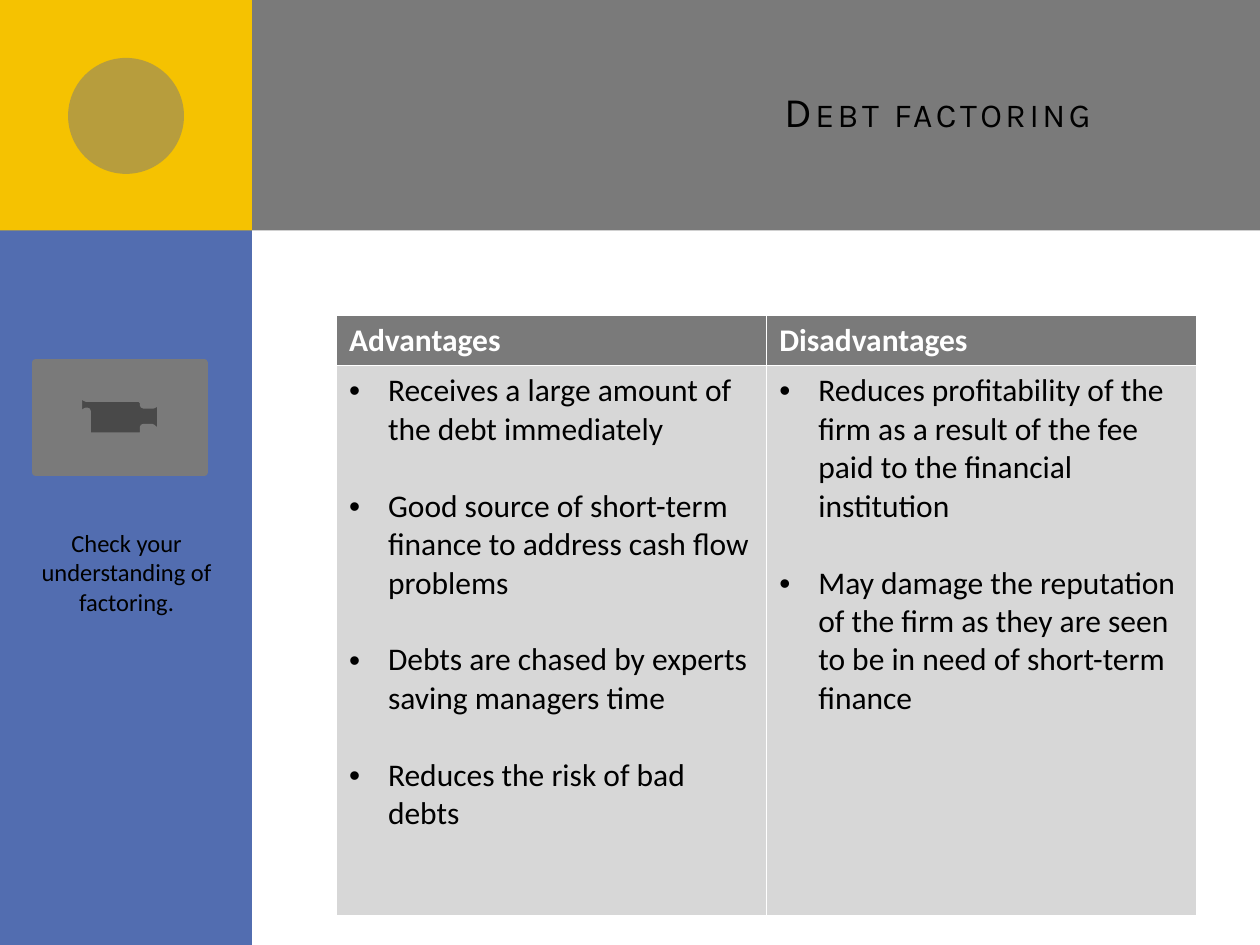
"""Build the debt factoring slide with its advantages and disadvantages table."""
from lxml import etree
from pptx import Presentation
from pptx.dml.color import RGBColor
from pptx.enum.shapes import MSO_SHAPE
from pptx.enum.text import MSO_ANCHOR, PP_ALIGN
from pptx.oxml.ns import qn
from pptx.util import Inches, Pt

RECTANGLE = MSO_SHAPE.RECTANGLE
OVAL = MSO_SHAPE.OVAL
MOVIE_BUTTON = MSO_SHAPE.ACTION_BUTTON_MOVIE
MIDDLE = MSO_ANCHOR.MIDDLE
CENTER = PP_ALIGN.CENTER
RIGHT = PP_ALIGN.RIGHT

GRAY = RGBColor(0x7A, 0x7A, 0x7A)
LIGHT_GRAY = RGBColor(0xD7, 0xD7, 0xD7)
BLUE = RGBColor(0x52, 0x6D, 0xB0)
YELLOW = RGBColor(0xF5, 0xC2, 0x01)
BLACK = RGBColor(0, 0, 0)
WHITE = RGBColor(0xFF, 0xFF, 0xFF)

COLUMNS = {
    "Advantages": [
        "Receives a large amount of the debt immediately",
        "Good source of short-term finance to address cash flow problems",
        "Debts are chased by experts saving managers time",
        "Reduces the risk of bad debts",
    ],
    "Disadvantages": [
        "Reduces profitability of the firm as a result of the fee paid to the financial institution",
        "May damage the reputation of the firm as they are seen to be in need of short-term finance",
    ],
}


def add_filled_shape(kind, left, top, width, height, color):
    shape = slide.shapes.add_shape(kind, Inches(left), Inches(top), Inches(width), Inches(height))
    shape.shadow.inherit = False
    shape.fill.solid()
    shape.fill.fore_color.rgb = color
    shape.line.fill.background()
    return shape


def add_run(paragraph, text, size, color, font="Calibri", bold=False):
    run = paragraph.add_run()
    run.text = text
    run.font.size = Pt(size)
    run.font.name = font
    run.font.bold = bold
    run.font.color.rgb = color
    return run


presentation = Presentation()
presentation.slide_width = Inches(10)
presentation.slide_height = Inches(7.5)
slide = presentation.slides.add_slide(presentation.slide_layouts[6])

add_filled_shape(RECTANGLE, 0.5, 0, 9.5, 1.83, GRAY)
add_filled_shape(RECTANGLE, 0, 0, 2, 7.5, BLUE)
add_filled_shape(RECTANGLE, 0, 0, 2, 1.83, YELLOW)
circle = add_filled_shape(OVAL, 0.54, 0.46, 0.92, 0.92, GRAY)
circle_color = circle.fill._xPr.find(qn("a:solidFill"))[0]
etree.SubElement(circle_color, qn("a:alpha"), val="50000")

title = slide.shapes.add_textbox(Inches(2.67), Inches(0.25), Inches(6.83), Inches(1.25))
title.text_frame.word_wrap = True
title.text_frame.vertical_anchor = MIDDLE
title.text_frame.margin_right = Inches(0.45)
paragraph = title.text_frame.paragraphs[0]
paragraph.alignment = RIGHT
run = add_run(paragraph, "Debt factoring", 24, BLACK, font="Karla")
run.font._element.set("cap", "small")
run.font._element.set("spc", "200")

table = slide.shapes.add_table(2, 2, Inches(2.67), Inches(2.5), Inches(6.83), Inches(4.77)).table
table.horz_banding = False
table.rows[0].height = Inches(0.4)
table.rows[1].height = Inches(4.37)

for column, (heading, points) in enumerate(COLUMNS.items()):
    header, body = table.cell(0, column), table.cell(1, column)
    for cell, color in ((header, GRAY), (body, LIGHT_GRAY)):
        cell.fill.solid()
        cell.fill.fore_color.rgb = color
    add_run(header.text_frame.paragraphs[0], heading, 18, WHITE, bold=True)

    for index, point in enumerate(points):
        frame = body.text_frame
        paragraph = frame.add_paragraph() if index else frame.paragraphs[0]
        if index < len(points) - 1:
            paragraph.space_after = Pt(22)
        properties = paragraph._p.get_or_add_pPr()
        properties.set("marL", str(Inches(0.31)))
        properties.set("indent", str(Inches(-0.31)))
        etree.SubElement(properties, qn("a:buFont"), typeface="Arial")
        etree.SubElement(properties, qn("a:buChar"), char="•")
        add_run(paragraph, point, 18, BLACK)

button = add_filled_shape(MOVIE_BUTTON, 0.28, 2.88, 1.34, 0.87, GRAY)
button.line.color.rgb = GRAY
button.line.width = Pt(4)

caption = slide.shapes.add_textbox(Inches(0), Inches(4.14), Inches(2.01), Inches(0.81))
caption.text_frame.word_wrap = True
paragraph = caption.text_frame.paragraphs[0]
paragraph.alignment = CENTER
add_run(paragraph, "Check your understanding of factoring.", 14, BLACK)

presentation.save("out.pptx")
